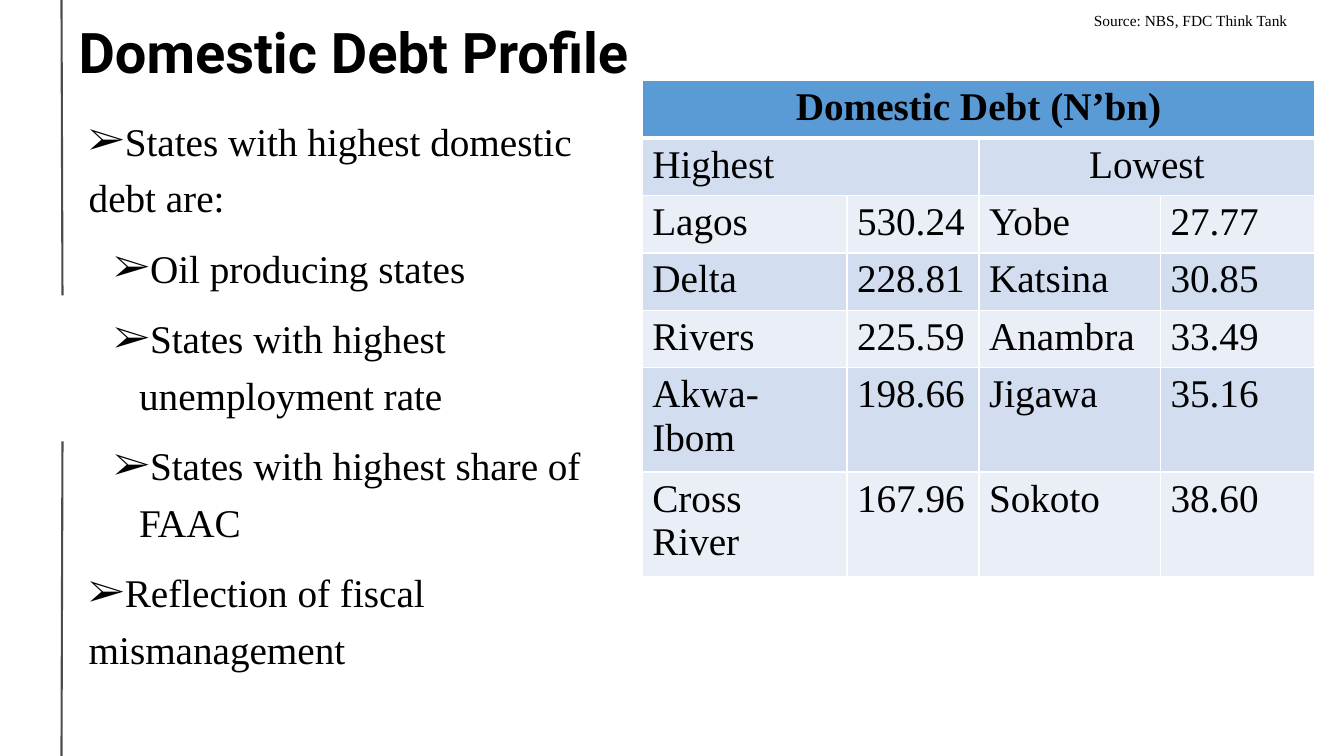
from dataclasses import dataclass

from lxml import etree
from pptx import Presentation
from pptx.dml.color import RGBColor
from pptx.enum.shapes import MSO_CONNECTOR
from pptx.enum.text import MSO_ANCHOR, MSO_AUTO_SIZE, PP_ALIGN
from pptx.oxml.ns import qn
from pptx.util import Pt

STRAIGHT = MSO_CONNECTOR.STRAIGHT
LEFT, CENTER = PP_ALIGN.LEFT, PP_ALIGN.CENTER
TOP, MIDDLE = MSO_ANCHOR.TOP, MSO_ANCHOR.MIDDLE
NO_FIT = MSO_AUTO_SIZE.NONE
EMU_PER_PX = 9144


@dataclass(frozen=True)
class Theme:
    title_font: str = "Roboto"
    text_font: str = "Times New Roman"
    title_size: int = 40
    text_size: int = 28
    source_size: int = 11
    ink: str = "000000"
    header_fill: str = "5B9BD5"
    band_fills: tuple = ("D2DEEF", "EAEFF7")
    border: str = "FFFFFF"
    line_opacity: int = 70
    line_width: float = 1.5


def px(value):
    return value * EMU_PER_PX


def apply(target, values):
    for name, value in values.items():
        setattr(target, name, value)


class SlideBuilder:
    def __init__(self, slide, theme):
        self.slide = slide
        self.theme = theme

    def place(self, shape, box):
        apply(shape, dict(zip(("left", "top", "width", "height"), map(px, box))))

    def style(self, paragraph, size, font=None, bold=False, **layout):
        apply(paragraph, layout)
        apply(paragraph.font, {
            "name": font or self.theme.text_font, "size": Pt(size), "bold": bold,
        })
        paragraph.font.color.rgb = RGBColor.from_string(self.theme.ink)

    def line(self, start, end):
        connector = self.slide.shapes.add_connector(
            STRAIGHT, *map(px, start), *map(px, end))
        connector.line.width = Pt(self.theme.line_width)
        connector.line.color.rgb = RGBColor.from_string(self.theme.ink)
        properties = connector._element.spPr
        color = properties.find(".//" + qn("a:srgbClr"))
        etree.SubElement(color, qn("a:alpha"), val=str(self.theme.line_opacity * 1000))
        etree.SubElement(properties, qn("a:effectLst"))

    def title(self, text, box):
        shape = self.slide.shapes.title
        self.place(shape, box)
        frame = shape.text_frame
        frame.text = text
        apply(frame, {
            "auto_size": NO_FIT, "word_wrap": False, "vertical_anchor": MIDDLE,
            "margin_left": 0, "margin_top": 0, "margin_right": 0, "margin_bottom": 0,
        })
        self.style(frame.paragraphs[0], self.theme.title_size, self.theme.title_font,
                   True, alignment=LEFT, line_spacing=0.9)

    def bullets(self, items, box):
        shape = self.slide.placeholders[1]
        self.place(shape, box)
        frame = shape.text_frame
        frame.text = "\n".join(text for level, text in items)
        apply(frame, {"auto_size": NO_FIT, "word_wrap": True, "vertical_anchor": TOP})
        for index, (paragraph, (level, text)) in enumerate(zip(frame.paragraphs, items)):
            properties = paragraph._p.get_or_add_pPr()
            properties.set("marL", str(px(50 * level)))
            properties.set("indent", str(px(-25)))
            etree.SubElement(properties, qn("a:buFont"), typeface=self.theme.text_font)
            etree.SubElement(properties, qn("a:buChar"), char="➢")
            self.style(paragraph, self.theme.text_size, level=level, alignment=LEFT,
                       line_spacing=1.2, space_before=Pt(10 if index else 0))

    def text(self, text, box):
        shape = self.slide.shapes.add_textbox(*map(px, box))
        shape.text_frame.word_wrap = True
        shape.text_frame.text = text
        self.style(shape.text_frame.paragraphs[0], self.theme.source_size)

    def cell(self, cell, text, fill, bottom=1, **format_values):
        cell.text = text
        cell.fill.solid()
        cell.fill.fore_color.rgb = RGBColor.from_string(fill)
        self.style(cell.text_frame.paragraphs[0], self.theme.text_size, **format_values)
        properties = cell._tc.get_or_add_tcPr()
        widths = {"a:lnL": 1, "a:lnR": 1, "a:lnT": 1, "a:lnB": bottom}
        for index, (edge, width) in enumerate(widths.items()):
            border = etree.Element(qn(edge), w=str(Pt(width)))
            solid = etree.SubElement(border, qn("a:solidFill"))
            etree.SubElement(solid, qn("a:srgbClr"), val=self.theme.border)
            properties.insert(index, border)

    def table(self, heading, groups, rows, origin, widths, heights):
        table = self.slide.shapes.add_table(
            len(heights), len(widths), *map(px, (*origin, sum(widths), sum(heights)))).table
        for column, width in zip(table.columns, widths):
            column.width = px(width)
        for row, height in zip(table.rows, heights):
            row.height = px(height)
        table.cell(0, 0).merge(table.cell(0, 3))
        for column in (0, 2):
            table.cell(1, column).merge(table.cell(1, column + 1))
        for column in range(len(widths)):
            self.cell(table.cell(0, column), "" if column else heading,
                      self.theme.header_fill, bottom=3, bold=True, alignment=CENTER)
        for row_index, values in enumerate([groups, *rows]):
            fill = self.theme.band_fills[row_index % 2]
            for column, value in enumerate(values):
                alignment = CENTER if value == "Lowest" else LEFT
                self.cell(table.cell(row_index + 1, column), value, fill,
                          alignment=alignment)


def main():
    presentation = Presentation()
    presentation.slide_width, presentation.slide_height = px(1333), px(750)
    slide = presentation.slides.add_slide(presentation.slide_layouts[1])
    builder = SlideBuilder(slide, Theme())

    builder.line((62, 438), (61, 750))
    builder.line((61, 0), (62, 293))
    builder.title("Domestic Debt Profile", (78, 29, 1057, 52))
    builder.bullets([
        (0, "States with highest domestic debt are:"),
        (1, "Oil producing states"),
        (1, "States with highest unemployment rate"),
        (1, "States with highest share of FAAC"),
        (0, "Reflection of fiscal mismanagement"),
    ], (78, 102, 558, 630))
    builder.text("Source: NBS, FDC Think Tank", (1075, 6, 250, 29))
    builder.table(
        "Domestic Debt (N’bn)",
        ("Highest", "", "Lowest", ""),
        [
            ("Lagos", "530.24", "Yobe", "27.77"),
            ("Delta", "228.81", "Katsina", "30.85"),
            ("Rivers", "225.59", "Anambra", "33.49"),
            ("Akwa-Ibom", "198.66", "Jigawa", "35.16"),
            ("Cross River", "167.96", "Sokoto", "38.60"),
        ],
        origin=(637, 80),
        widths=(203, 131, 180, 153),
        heights=[57] * 5 + [103] * 2,
    )
    presentation.save("out.pptx")


if __name__ == "__main__":
    main()
